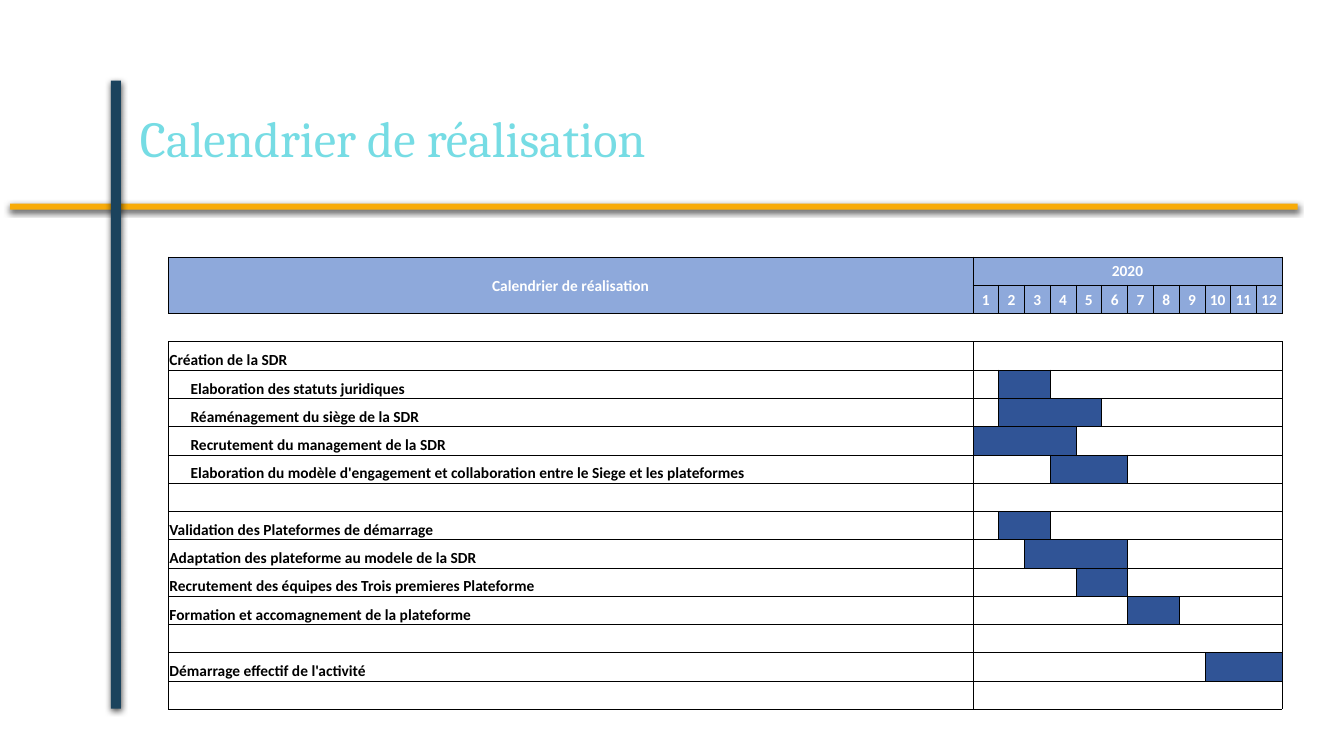
"""Build the project calendar slide with its twelve-month Gantt table."""
from lxml.etree import SubElement
from pptx import Presentation
from pptx.dml.color import RGBColor
from pptx.enum.shapes import MSO_SHAPE
from pptx.enum.text import MSO_ANCHOR, PP_ALIGN
from pptx.oxml import parse_xml
from pptx.oxml.ns import qn
from pptx.util import Inches, Pt

TITLE = "Calendrier de réalisation"
YEAR = "2020"
MONTHS = 12
TASKS = [
    ("Création de la SDR", 0, None),
    ("Elaboration des statuts juridiques", 1, (2, 3)),
    ("Réaménagement du siège de la SDR", 1, (2, 5)),
    ("Recrutement du management de la SDR", 1, (1, 4)),
    ("Elaboration du modèle d'engagement et collaboration entre le Siege et les plateformes", 1, (4, 6)),
    ("", 0, None),
    ("Validation des Plateformes de démarrage", 0, (2, 3)),
    ("Adaptation des plateforme au modele de la SDR", 0, (3, 6)),
    ("Recrutement des équipes des Trois premieres Plateforme", 0, (5, 6)),
    ("Formation et accomagnement de la plateforme", 0, (7, 8)),
    ("", 0, None),
    ("Démarrage effectif de l'activité", 0, (10, 12)),
    ("", 0, None),
]
RULES = [((0.1, 2.02, 12.77, 0.06), "F8AB08"), ((1.1, 0.8, 0.1, 6.23), "1B435D")]
LEFT, TOP, WIDTH, HEIGHT, LABEL = 1.67, 2.55, 11.05, 4.49, 7.98
HEAD, BAR, WHITE, BLACK = "8EA9DB", "305496", "FFFFFF", "000000"
FIRST = 3
NS = 'xmlns:a="http://schemas.openxmlformats.org/drawingml/2006/main"'
SHADOW = (f'<a:effectLst {NS}><a:outerShdw blurRad="57150" dist="19050" dir="5400000" '
          'algn="ctr" rotWithShape="0"><a:srgbClr val="000000"><a:alpha val="63000"/>'
          '</a:srgbClr></a:outerShdw></a:effectLst>')


def paint(target, color):
    target.solid()
    target.fore_color.rgb = RGBColor.from_string(color)


def write(para, text, font, size, color, bold=False):
    run = para.add_run()
    run.text = text
    run.font.name, run.font.size, run.font.bold = font, Pt(size), bold
    paint(run.font.fill, color)


def edge(cell, sides):
    props = cell._tc.get_or_add_tcPr()
    for spot, side in enumerate("LRTB"):
        ink = (f'<a:solidFill><a:srgbClr val="{BLACK}"/></a:solidFill>'
               if side in sides else "<a:noFill/>")
        props.insert(spot, parse_xml(f'<a:ln{side} {NS} w="6350">{ink}</a:ln{side}>'))


def style(cell, color=None, sides="LRTB"):
    cell.margin_left = cell.margin_top = cell.margin_right = Inches(0.01)
    cell.margin_bottom = 0
    if color:
        paint(cell.fill, color)
    else:
        cell.fill.background()
    edge(cell, sides)
    SubElement(cell.text_frame.paragraphs[0]._p, qn("a:endParaRPr"), sz="1100")


def head(cell, text):
    cell.vertical_anchor = MSO_ANCHOR.MIDDLE
    para = cell.text_frame.paragraphs[0]
    para.alignment = PP_ALIGN.CENTER
    write(para, text, "Calibri", 11, WHITE, True)


def span(grid, row, start, end, color):
    if start > end:
        return
    for col in range(start, end + 1):
        style(grid.cell(row, col), color)
    if end > start:
        grid.cell(row, start).merge(grid.cell(row, end))


def add_rules(slide):
    for box, color in RULES:
        rule = slide.shapes.add_shape(MSO_SHAPE.RECTANGLE, *map(Inches, box))
        paint(rule.fill, color)
        rule.line.fill.background()
        rule._element.spPr.append(parse_xml(SHADOW))


def add_title(slide):
    box = slide.shapes.add_textbox(*map(Inches, (1.29, 0.8, 11.5, 1.2)))
    frame = box.text_frame
    frame.word_wrap = True
    frame.vertical_anchor = MSO_ANCHOR.MIDDLE
    para = frame.paragraphs[0]
    para.line_spacing = 0.9
    write(para, TITLE, "Cambria", 36, "76DCE4")


def add_grid(slide):
    count = FIRST + len(TASKS)
    frame = slide.shapes.add_table(count, MONTHS + 1, *map(Inches, (LEFT, TOP, WIDTH, HEIGHT)))
    grid = frame.table
    grid.first_row = grid.horz_banding = False
    for row in grid.rows:
        row.height = Inches(HEIGHT / count)
    for col, part in enumerate(grid.columns):
        part.width = Inches((WIDTH - LABEL) / MONTHS if col else LABEL)

    for row in range(2):
        style(grid.cell(row, 0), HEAD)
    grid.cell(0, 0).merge(grid.cell(1, 0))
    head(grid.cell(0, 0), TITLE)
    span(grid, 0, 1, MONTHS, HEAD)
    head(grid.cell(0, 1), YEAR)
    for month in range(1, MONTHS + 1):
        style(grid.cell(1, month), HEAD)
        head(grid.cell(1, month), str(month))
    for col in range(MONTHS + 1):
        style(grid.cell(2, col), sides="TB")

    for row, (text, level, dates) in enumerate(TASKS, FIRST):
        label = grid.cell(row, 0)
        style(label)
        label.vertical_anchor = MSO_ANCHOR.BOTTOM
        if level:
            label.margin_left = Inches(0.22)
        if text:
            write(label.text_frame.paragraphs[0], text, "Calibri", 11, BLACK, True)
        start, end = dates or (MONTHS + 1, MONTHS)
        span(grid, row, 1, start - 1, WHITE)
        span(grid, row, start, end, BAR)
        if dates:
            span(grid, row, end + 1, MONTHS, WHITE)


def main():
    deck = Presentation()
    deck.slide_width, deck.slide_height = Inches(13.33), Inches(7.5)
    slide = deck.slides.add_slide(deck.slide_layouts[6])
    add_rules(slide)
    add_title(slide)
    add_grid(slide)
    deck.save("out.pptx")


if __name__ == "__main__":
    main()
